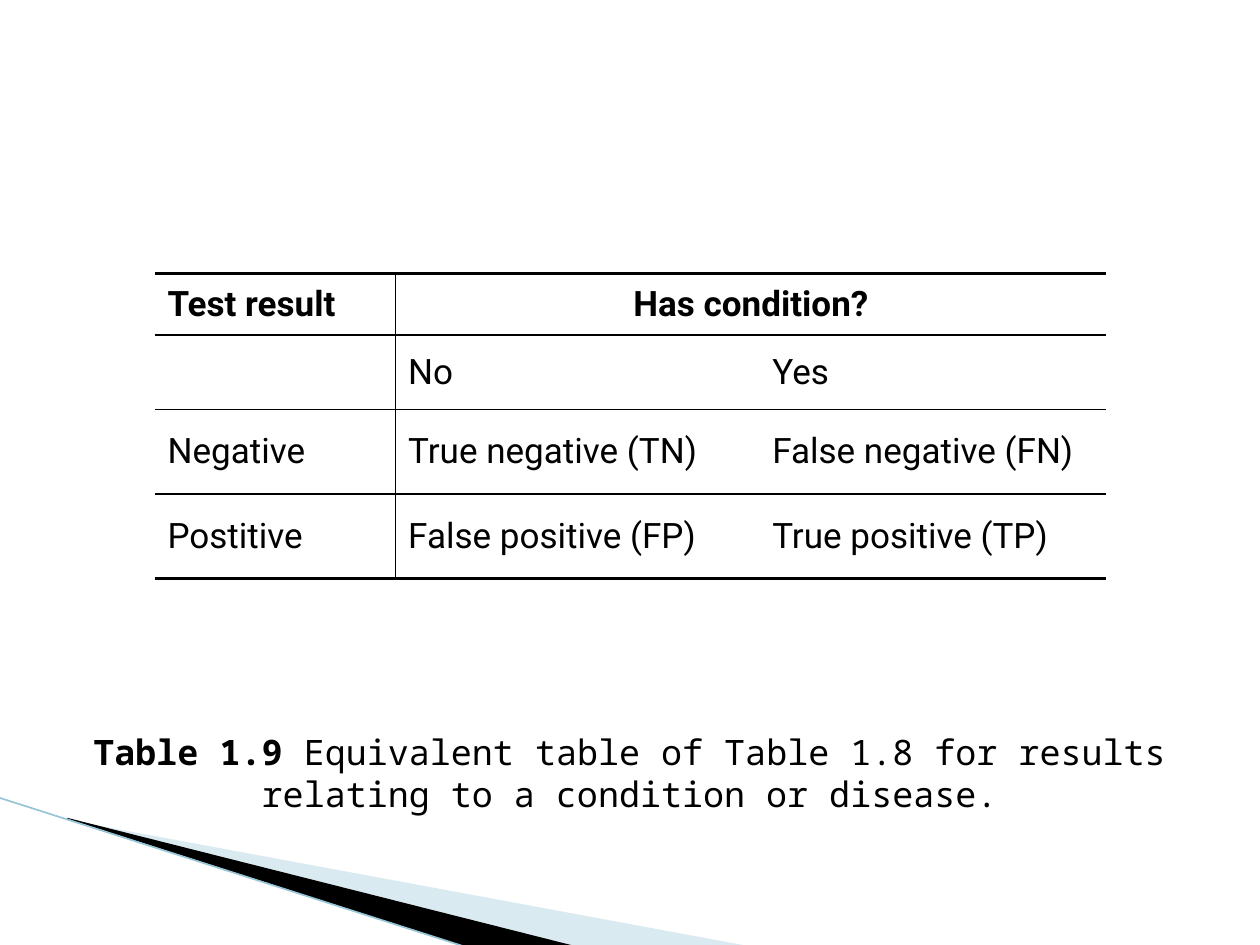
from dataclasses import dataclass

from lxml import etree
from pptx import Presentation
from pptx.dml.color import RGBColor
from pptx.enum.shapes import MSO_CONNECTOR
from pptx.enum.text import MSO_ANCHOR, PP_ALIGN
from pptx.oxml.ns import qn
from pptx.util import Inches, Pt

CENTER, LEFT = PP_ALIGN.CENTER, PP_ALIGN.LEFT
MIDDLE = MSO_ANCHOR.MIDDLE
STRAIGHT = MSO_CONNECTOR.STRAIGHT
BLANK_LAYOUT = 6


@dataclass(frozen=True)
class Theme:
    ink: str = "000000"
    paper: str = "FFFFFF"
    pale_blue: str = "A0CBDC"
    edge_blue: str = "97C5D8"
    table_font: str = "Roboto"
    caption_font: str = "Noto Sans Mono"
    text_size: int = 20
    thick_rule: float = 2.25
    thin_rule: float = 1
    edge_width: float = 0.95


THEME = Theme()
COLUMN_WIDTHS = (1.91, 2.89, 2.75)
ROW_HEIGHTS = (0.49, 0.59, 0.67, 0.67)
RESULTS = (
    ("Test result", "Has condition?", ""),
    ("", "No", "Yes"),
    ("Negative", "True negative (TN)", "False negative (FN)"),
    ("Postitive", "False positive (FP)", "True positive (TP)"),
)


def rgb(colour):
    return RGBColor.from_string(colour)


def style_text(paragraph, font_name, align):
    paragraph.alignment = align
    paragraph.font.name = font_name
    paragraph.font.size = Pt(THEME.text_size)
    paragraph.font.color.rgb = rgb(THEME.ink)


def add_wedge(slide, left, top, corners, colour, alpha=100):
    """Draw a filled outline whose corners are relative to (left, top)."""
    points = [(Inches(left + x), Inches(top + y)) for x, y in corners]
    builder = slide.shapes.build_freeform(*points[0], scale=1.0)
    builder.add_line_segments(points[1:], close=True)
    wedge = builder.convert_to_shape()
    wedge.shadow.inherit = False
    wedge.line.fill.background()
    wedge.fill.solid()
    wedge.fill.fore_color.rgb = rgb(colour)
    if alpha < 100:
        colour_node = wedge.fill._xPr.find(".//" + qn("a:srgbClr"))
        etree.SubElement(colour_node, qn("a:alpha"), val=str(alpha * 1000))


def add_corner_swoosh(slide, left, top):
    add_wedge(slide, left, top,
              ((0.55, 0.18), (5.95, 1.18), (4.56, 1.18), (0.55, 0.17)),
              THEME.pale_blue, alpha=40)
    add_wedge(slide, left, top,
              ((0.53, 0.16), (4.57, 1.18), (3.72, 1.19), (0.54, 0.17)),
              THEME.ink)
    edge = slide.shapes.add_connector(
        STRAIGHT, Inches(left - 0.01), Inches(top),
        Inches(left + 3.71), Inches(top + 1.19))
    edge.line.color.rgb = rgb(THEME.edge_blue)
    edge.line.width = Pt(THEME.edge_width)
    etree.SubElement(edge._element.spPr, qn("a:effectLst"))


def set_borders(cell, widths):
    """Set left, right, top and bottom rules; a width of 0 means none."""
    properties = cell._tc.get_or_add_tcPr()
    for side, width in zip("LRTB", widths):
        rule = etree.SubElement(properties, qn(f"a:ln{side}"), w=str(Pt(width)))
        if width:
            fill = etree.SubElement(rule, qn("a:solidFill"))
            etree.SubElement(fill, qn("a:srgbClr"), val=THEME.ink)
        else:
            etree.SubElement(rule, qn("a:noFill"))


def add_results_table(slide, left, top):
    row_count, column_count = len(ROW_HEIGHTS), len(COLUMN_WIDTHS)
    table = slide.shapes.add_table(
        row_count, column_count, Inches(left), Inches(top),
        Inches(sum(COLUMN_WIDTHS)), Inches(sum(ROW_HEIGHTS))).table
    table.first_row = table.horz_banding = False
    for column, width in zip(table.columns, COLUMN_WIDTHS):
        column.width = Inches(width)
    for row, height in zip(table.rows, ROW_HEIGHTS):
        row.height = Inches(height)

    for r, row_texts in enumerate(RESULTS):
        # Outer rules are thick, inner ones thin
        above = THEME.thick_rule if r == 0 else THEME.thin_rule
        below = THEME.thick_rule if r == row_count - 1 else THEME.thin_rule
        for c, text in enumerate(row_texts):
            cell = table.cell(r, c)
            # One vertical rule, after the test result column
            set_borders(cell, (THEME.thin_rule if c == 1 else 0,
                               THEME.thin_rule if c == 0 else 0, above, below))
            cell.fill.background()
            cell.vertical_anchor = MIDDLE
            cell.text = text
            paragraph = cell.text_frame.paragraphs[0]
            style_text(paragraph, THEME.table_font,
                       CENTER if r == 0 and c > 0 else LEFT)
            paragraph.font.bold = r == 0
    table.cell(0, 1).merge(table.cell(0, 2))


def add_caption(slide, left, top, width, height):
    frame = slide.shapes.add_textbox(
        Inches(left), Inches(top), Inches(width), Inches(height)).text_frame
    frame.word_wrap = True
    paragraph = frame.paragraphs[0]
    style_text(paragraph, THEME.caption_font, CENTER)
    label = paragraph.add_run()
    label.text = "Table 1.9"
    label.font.bold = True
    paragraph.add_run().text = (
        " Equivalent table of Table 1.8 for results"
        " relating to a condition or disease.")


def main():
    prs = Presentation()
    prs.slide_width, prs.slide_height = Inches(10), Inches(7.5)
    slide = prs.slides.add_slide(prs.slide_layouts[BLANK_LAYOUT])
    slide.background.fill.solid()
    slide.background.fill.fore_color.rgb = rgb(THEME.paper)
    add_corner_swoosh(slide, 0, 6.33)
    add_results_table(slide, 1.23, 2.17)
    add_caption(slide, 0, 5.75, 10, 0.43)
    prs.save("out.pptx")


if __name__ == "__main__":
    main()
